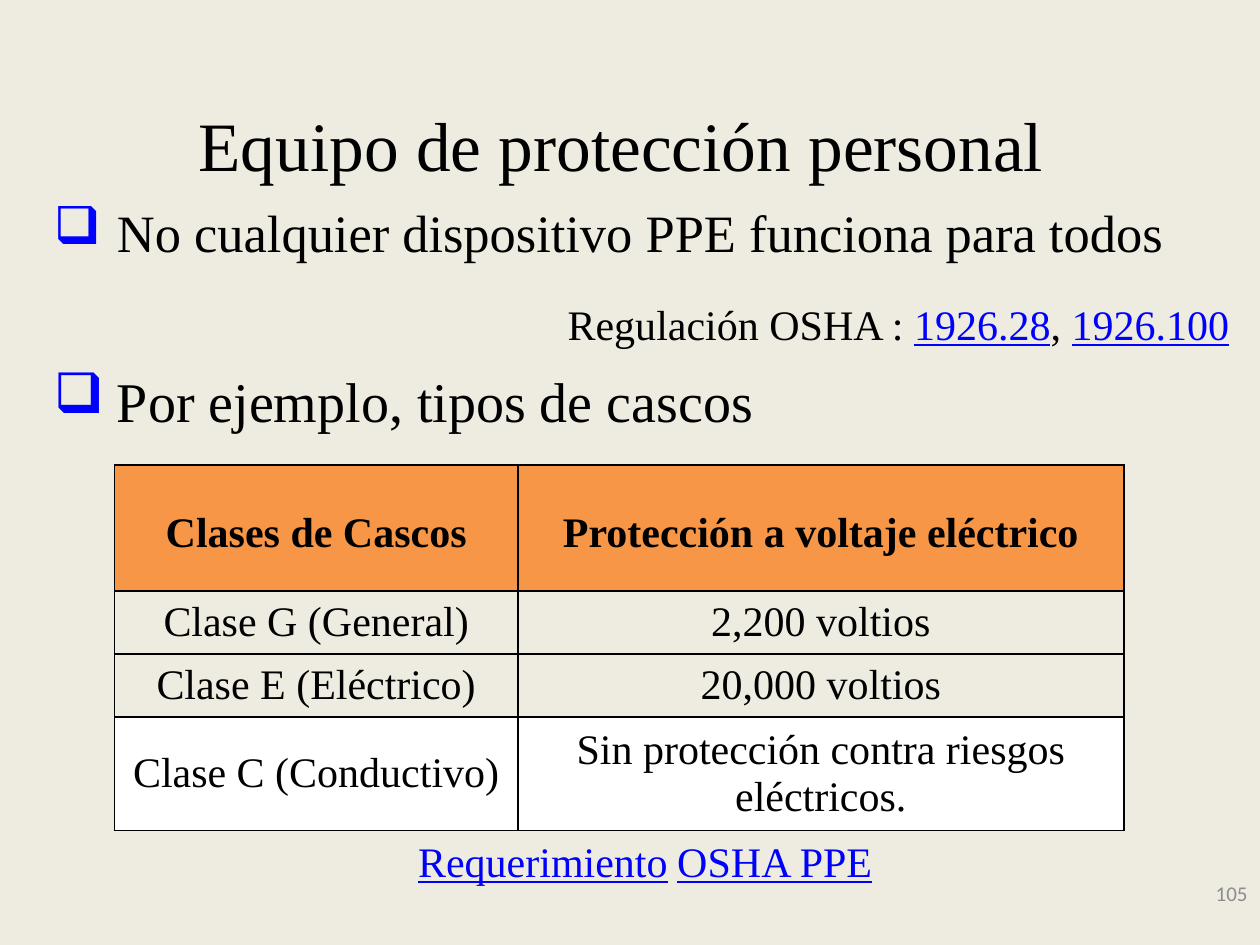
"""Build a slide on personal protective equipment with a table of helmet classes."""
from lxml.etree import SubElement
from pptx import Presentation
from pptx.dml.color import RGBColor
from pptx.enum.text import MSO_ANCHOR, PP_ALIGN
from pptx.oxml import parse_xml
from pptx.oxml.ns import nsdecls, qn
from pptx.util import Inches, Pt

BLACK = RGBColor(0x00, 0x00, 0x00)
BLUE = RGBColor(0x00, 0x00, 0xFF)
GRAY = RGBColor(0x8C, 0x8C, 0x8C)
ORANGE = RGBColor(0xF7, 0x96, 0x46)
WHITE = RGBColor(0xFF, 0xFF, 0xFF)
CREAM = RGBColor(0xEE, 0xEC, 0xE1)
SERIF = "Times New Roman"
SANS = "Calibri"

presentation = Presentation()
presentation.slide_width = Inches(10)
presentation.slide_height = Inches(7.5)
COLUMN = presentation.slide_width / 100
ROW = presentation.slide_height / 100

slide = presentation.slides.add_slide(presentation.slide_layouts[6])
slide.background.fill.solid()
slide.background.fill.fore_color.rgb = CREAM


def write(frame, *pieces, size=24, font=SERIF, color=BLACK, bold=False,
          align=PP_ALIGN.CENTER, anchor=MSO_ANCHOR.TOP, spacing=None):
    """Fill a text frame with pieces, each a plain string or a (string, format) pair."""
    frame.word_wrap = True
    frame.vertical_anchor = anchor
    paragraph = frame.paragraphs[0]
    paragraph.alignment = align
    paragraph.line_spacing = spacing
    for piece in pieces:
        content, look = (piece, {}) if isinstance(piece, str) else piece
        run = paragraph.add_run()
        run.text = content
        run.font.size = Pt(size)
        run.font.bold = bold
        run.font.name = look.get("font", font)
        run.font.color.rgb = look.get("color", color)
        run.font.underline = look.get("underline", False)
    return paragraph


def add_box(left, top, width, height):
    """Add a text box placed in hundredths of the slide and return its frame."""
    box = slide.shapes.add_textbox(int(left * COLUMN), int(top * ROW),
                                   int(width * COLUMN), int(height * ROW))
    return box.text_frame


LINK = {"color": BLUE, "underline": True}

write(add_box(1.1, 11.07, 96.4, 8.27), "Equipo de protección personal",
      size=39.6, anchor=MSO_ANCHOR.MIDDLE)

bullet_lines = [
    ("No cualquier dispositivo PPE funciona para todos", 20.53, 95.8, 8.13, 30),
    ("Por ejemplo, tipos de cascos", 38.13, 81.6, 8.53, 32),
]
for content, top, width, height, size in bullet_lines:
    paragraph = write(add_box(3.3, top, width, height), content,
                      size=size, align=PP_ALIGN.LEFT)
    properties = paragraph._p.get_or_add_pPr()
    properties.set("marL", str(int(5 * COLUMN)))
    properties.set("indent", str(int(-5 * COLUMN)))
    bullet_color = SubElement(properties, qn("a:buClr"))
    SubElement(bullet_color, qn("a:srgbClr")).set("val", str(BLUE))
    SubElement(properties, qn("a:buChar")).set("char", "❑")

write(add_box(43.4, 30.93, 55.8, 6.67), "Regulación OSHA : ",
      ("1926.28", LINK), ", ", ("1926.100", LINK))

helmet_rows = [
    ("Clases de Cascos", "Protección a voltaje eléctrico"),
    ("Clase G (General)", "2,200 voltios"),
    ("Clase E (Eléctrico)", "20,000 voltios"),
    ("Clase C (Conductivo)", "Sin protección contra riesgos eléctricos."),
]
column_widths = [32, 48.1]
row_heights = [13.33, 6.67, 6.67, 12]
row_fills = [ORANGE, None, None, WHITE]

table = slide.shapes.add_table(
    len(row_heights), len(column_widths), int(9.1 * COLUMN), int(49.2 * ROW),
    int(sum(column_widths) * COLUMN), int(sum(row_heights) * ROW)).table
table.first_row = False
table.horz_banding = False
for column, width in zip(table.columns, column_widths):
    column.width = int(width * COLUMN)

for row_index, (row, height, fill) in enumerate(zip(table.rows, row_heights, row_fills)):
    row.height = int(height * ROW)
    header = row_index == 0
    for cell, content in zip(row.cells, helmet_rows[row_index]):
        write(cell.text_frame, content, bold=header, spacing=0.76 if header else None)
        cell.vertical_anchor = MSO_ANCHOR.MIDDLE
        if header:
            cell.margin_top = int(2.5 * ROW)
        if fill is None:
            cell.fill.background()
        else:
            cell.fill.solid()
            cell.fill.fore_color.rgb = fill
        cell_properties = cell._tc.get_or_add_tcPr()
        for position, side in enumerate(("lnL", "lnR", "lnT", "lnB")):
            border = parse_xml(
                f'<a:{side} {nsdecls("a")} w="{Pt(1)}"><a:solidFill>'
                f'<a:srgbClr val="{BLACK}"/></a:solidFill></a:{side}>')
            cell_properties.insert(position, border)

write(add_box(23.3, 87.73, 55.8, 6.67), ("Requerimiento", LINK),
      (" ", {"font": SANS}), ("OSHA PPE", LINK))
write(add_box(77.5, 91.87, 22.5, 5.33), "105", size=12, font=SANS, color=GRAY,
      align=PP_ALIGN.RIGHT, anchor=MSO_ANCHOR.MIDDLE)

presentation.save("out.pptx")
